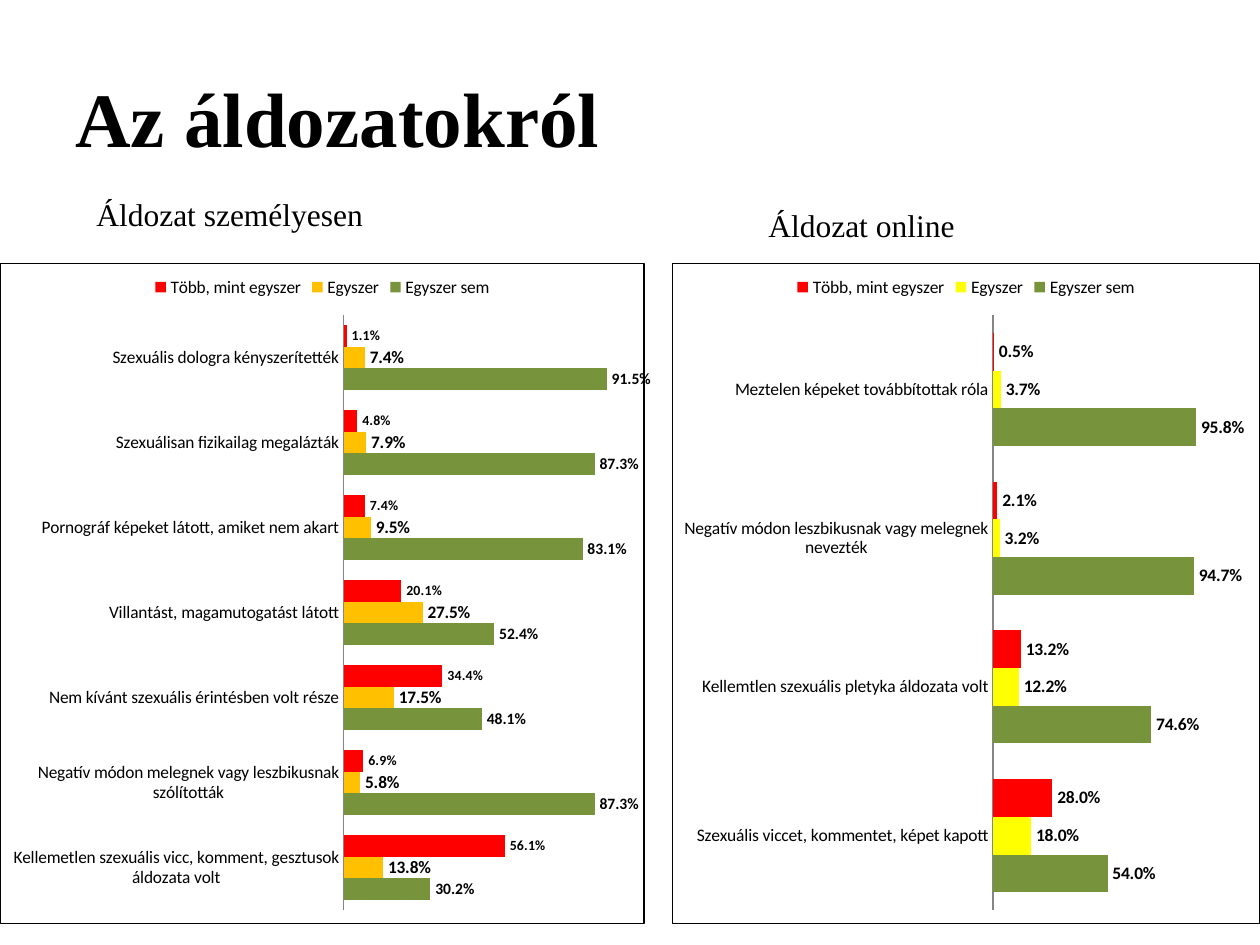
from lxml.etree import fromstring
from pptx import Presentation
from pptx.chart.data import CategoryChartData
from pptx.dml.color import RGBColor
from pptx.enum.chart import XL_CHART_TYPE, XL_LABEL_POSITION, XL_LEGEND_POSITION, XL_TICK_MARK
from pptx.enum.text import MSO_ANCHOR
from pptx.oxml.ns import nsdecls
from pptx.util import Pt

COLORS = {
    "black": "000000",
    "white": "FFFFFF",
    "axis": "868686",
    "green": "77933C",
    "amber": "FFC000",
    "yellow": "FFFF00",
    "red": "FF0000",
}
PERCENT = "0.0%"
IN_PERSON = [
    ("Kellemetlen szexuális vicc, komment, gesztusok áldozata volt", 0.302, 0.138, 0.561),
    ("Negatív módon melegnek vagy leszbikusnak szólították", 0.873, 0.058, 0.069),
    ("Nem kívánt szexuális érintésben volt része", 0.481, 0.175, 0.344),
    ("Villantást, magamutogatást látott", 0.524, 0.275, 0.201),
    ("Pornográf képeket látott, amiket nem akart", 0.831, 0.095, 0.074),
    ("Szexuálisan fizikailag megalázták", 0.873, 0.079, 0.048),
    ("Szexuális dologra kényszerítették", 0.915, 0.074, 0.011),
]
ONLINE = [
    ("Szexuális viccet, kommentet, képet kapott", 0.54, 0.18, 0.28),
    ("Kellemtlen szexuális pletyka áldozata volt", 0.746, 0.122, 0.132),
    ("Negatív módon leszbikusnak vagy melegnek nevezték", 0.947, 0.032, 0.021),
    ("Meztelen képeket továbbítottak róla", 0.958, 0.037, 0.005),
]
ANSWERS = ["Egyszer sem", "Egyszer", "Több, mint egyszer"]


def color(name):
    return RGBColor.from_string(COLORS[name])


def format_font(font, name="Calibri", size=10, bold=False, fill="black"):
    font.name = name
    font.size = Pt(size)
    font.bold = bold
    font.color.rgb = color(fill)


def write_text(frame, text, anchor=MSO_ANCHOR.TOP, **font_format):
    frame.word_wrap = True
    frame.vertical_anchor = anchor
    run = frame.paragraphs[0].add_run()
    run.text = text
    format_font(run.font, **font_format)


class SlideBuilder:
    heading_font = "Times New Roman"
    gap_width = 95
    border_width = 0.75

    def __init__(self, slide):
        self.slide = slide

    def add_text(self, text, left, top, width, height, **text_format):
        box = self.slide.shapes.add_textbox(Pt(left), Pt(top), Pt(width), Pt(height))
        write_text(box.text_frame, text, name=self.heading_font, **text_format)

    def add_bar_chart(self, rows, left, top, width, height, fills, label_sizes):
        categories, *columns = zip(*rows)
        data = CategoryChartData(number_format=PERCENT)
        data.categories = categories
        for answer, values in zip(ANSWERS, columns):
            data.add_series(answer, values)
        chart = self.slide.shapes.add_chart(
            XL_CHART_TYPE.BAR_CLUSTERED, Pt(left), Pt(top), Pt(width), Pt(height), data
        ).chart
        format_font(chart.font)
        chart.has_title = False
        chart.has_legend = True
        chart.legend.position = XL_LEGEND_POSITION.TOP
        chart.legend.include_in_layout = False
        self.format_axes(chart)
        plot = chart.plots[0]
        plot.gap_width = self.gap_width
        plot.vary_by_categories = False
        for series, fill, size in zip(plot.series, fills, label_sizes):
            self.format_series(series, fill, size)
        self.add_chart_border(chart)

    def format_axes(self, chart):
        chart.value_axis.visible = False
        chart.value_axis.has_major_gridlines = False
        chart.value_axis.tick_labels.number_format = PERCENT
        chart.value_axis.tick_labels.number_format_is_linked = False
        chart.category_axis.major_tick_mark = XL_TICK_MARK.NONE
        chart.category_axis.format.line.color.rgb = color("axis")
        chart.category_axis.format.line.width = Pt(self.border_width)

    def format_series(self, series, fill, size):
        series.invert_if_negative = False
        series.format.fill.solid()
        series.format.fill.fore_color.rgb = color(fill)
        labels = series.data_labels
        labels.show_value = True
        labels.number_format = PERCENT
        labels.number_format_is_linked = False
        labels.position = XL_LABEL_POSITION.OUTSIDE_END
        format_font(labels.font, size=size, bold=True)

    def add_chart_border(self, chart):
        properties = fromstring(
            f'<c:spPr {nsdecls("c", "a")}>'
            f'<a:solidFill><a:srgbClr val="{COLORS["white"]}"/></a:solidFill>'
            f'<a:ln w="{Pt(self.border_width)}"><a:solidFill>'
            f'<a:srgbClr val="{COLORS["black"]}"/></a:solidFill></a:ln></c:spPr>'
        )
        chart.element.chart.addnext(properties)


def main():
    presentation = Presentation()
    presentation.slide_width = Pt(720)
    presentation.slide_height = Pt(540)
    builder = SlideBuilder(presentation.slides.add_slide(presentation.slide_layouts[6]))

    builder.add_text("Az áldozatokról", 36, 21.6, 648, 90,
                     anchor=MSO_ANCHOR.MIDDLE, size=44, bold=True)
    builder.add_bar_chart(IN_PERSON, 0, 150, 372, 378,
                          fills=["green", "amber", "red"], label_sizes=[9, 10, 8])
    builder.add_text("Áldozat személyesen", 48, 108, 198, 29, size=18)
    builder.add_text("Áldozat online", 432, 114, 240, 29, size=18)
    builder.add_bar_chart(ONLINE, 384, 150, 336, 378,
                          fills=["green", "yellow", "red"], label_sizes=[10, 10, 10])

    presentation.save("out.pptx")


if __name__ == "__main__":
    main()
